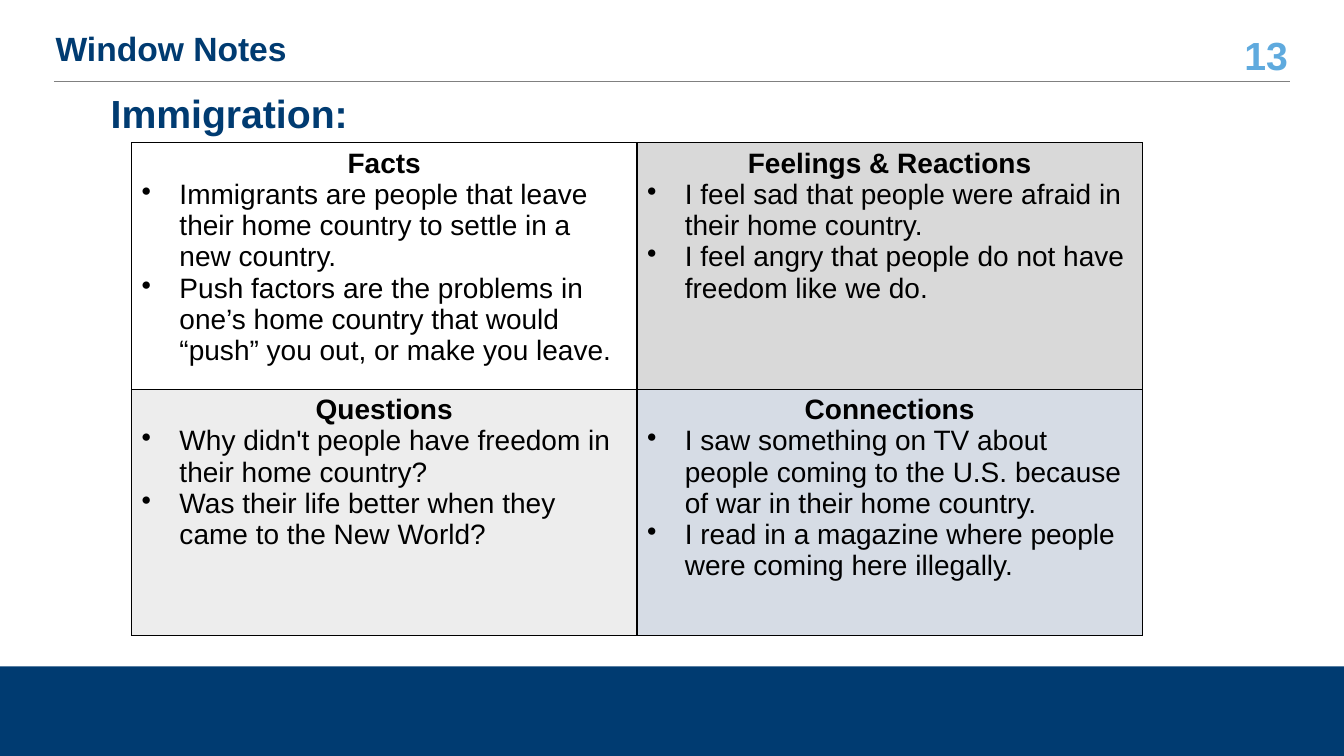
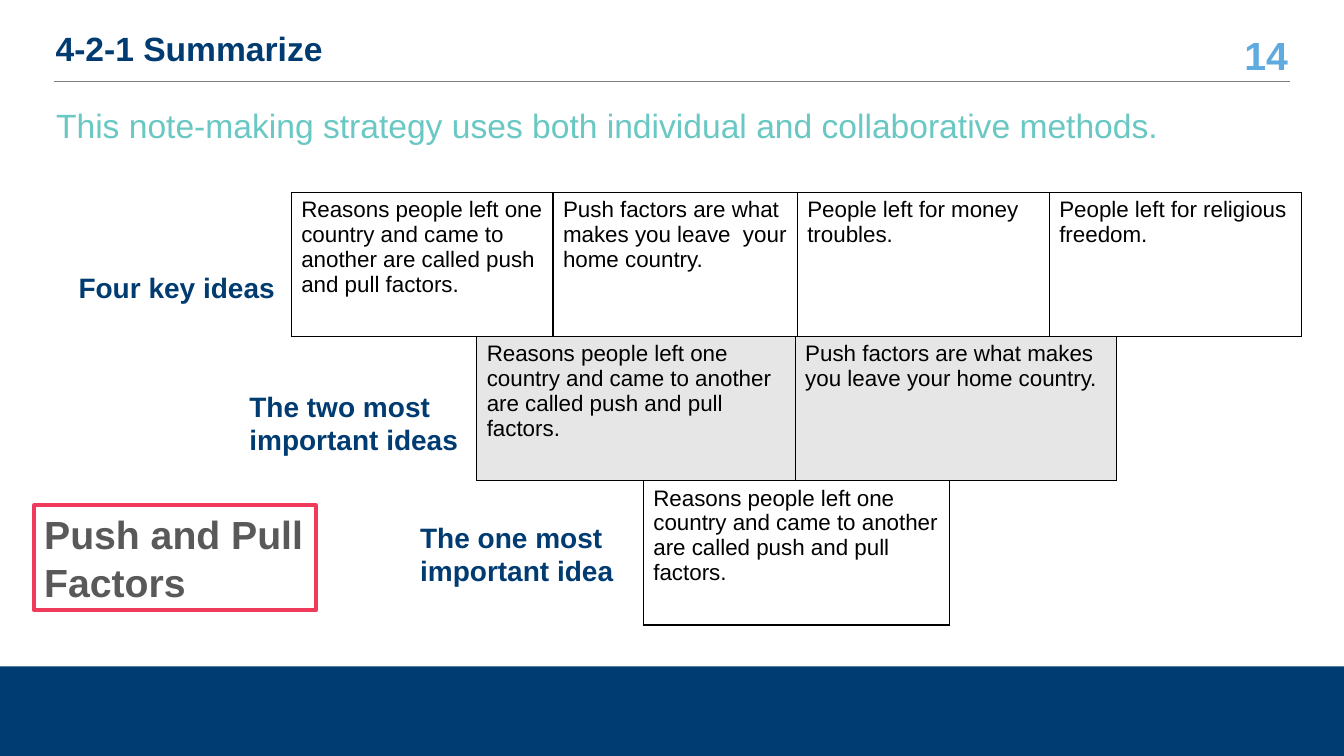
from pptx import Presentation
from pptx.dml.color import RGBColor
from pptx.enum.shapes import MSO_CONNECTOR, MSO_SHAPE
from pptx.enum.text import MSO_ANCHOR, MSO_AUTO_SIZE, PP_ALIGN
from pptx.oxml import parse_xml
from pptx.oxml.ns import nsdecls
from pptx.oxml.xmlchemy import OxmlElement
from pptx.util import Pt

NAVY, SKY, TEAL, RED = "003B71", "5FAADE", "69C8C3", "EF3A5B"
BLACK, WHITE, GRAY, DARK = "000000", "FFFFFF", "808080", "595959"
PALE, SILVER, MIST, BLUE_GRAY = "E7E6E6", "D9D9D9", "EDEDED", "D6DCE5"


def rgb(color):
    return RGBColor.from_string(color)


class Deck:
    font = "Arial"
    width, height = 960, 540

    def __init__(self):
        self.prs = Presentation()
        self.prs.slide_width, self.prs.slide_height = Pt(self.width), Pt(self.height)
        self.s = None

    def box(self, *lengths):
        return [Pt(v) for v in lengths]

    def style(self, p, size, color, bold=False, align=None):
        p.alignment = align
        for r in p.runs:
            f = r.font
            f.name, f.size, f.bold = self.font, Pt(size), bold
            f.color.rgb = rgb(color)

    def slide(self, title, number):
        self.s = self.prs.slides.add_slide(self.prs.slide_layouts[5])
        band = self.shape(0, 476, self.width, 64)
        band.fill.solid()
        band.fill.fore_color.rgb = rgb(NAVY)
        band.line.fill.background()
        self.text(str(number), 869, 24, 58, 30, 28, SKY, True, PP_ALIGN.RIGHT)
        self.rule(38.5, 921.5, 58)
        sp = self.s.shapes.title
        sp.left, sp.top, sp.width, sp.height = self.box(32.5, 21.5, 835, 30)
        tf = sp.text_frame
        tf.text = title
        tf.auto_size = MSO_AUTO_SIZE.NONE
        tf.vertical_anchor = MSO_ANCHOR.MIDDLE
        p = tf.paragraphs[0]
        p.line_spacing = 0.9
        self.style(p, 24, NAVY, True, PP_ALIGN.LEFT)

    def shape(self, x, y, w, h):
        sp = self.s.shapes.add_shape(MSO_SHAPE.RECTANGLE, *self.box(x, y, w, h))
        sp.shadow.inherit = False
        return sp

    def rule(self, x1, x2, y):
        line = self.s.shapes.add_connector(MSO_CONNECTOR.STRAIGHT, *self.box(x1, y, x2, y))
        line.line.color.rgb = rgb(GRAY)
        line.line.width = Pt(0.5)
        line._element.spPr.append(OxmlElement("a:effectLst"))

    def fill_text(self, sp, text, size, color, bold, align):
        tf = sp.text_frame
        tf.word_wrap = True
        tf.vertical_anchor = MSO_ANCHOR.MIDDLE
        tf.text = text
        self.style(tf.paragraphs[0], size, color, bold, align)

    def text(self, text, x, y, w, h, size, color, bold=True, align=PP_ALIGN.LEFT):
        sp = self.s.shapes.add_textbox(*self.box(x, y, w, h))
        self.fill_text(sp, text, size, color, bold, align)

    def framed(self, text, x, y, w, h):
        sp = self.shape(x, y, w, h)
        sp.fill.background()
        sp.line.color.rgb = rgb(RED)
        sp.line.width = Pt(3)
        self.fill_text(sp, text, 28, DARK, True, PP_ALIGN.LEFT)

    def table(self, x, y, widths, row_height, rows):
        frame = self.s.shapes.add_table(
            len(rows), len(widths), *self.box(x, y, sum(widths), row_height * len(rows)))
        tbl = frame.table
        tbl.first_row = tbl.horz_banding = False
        for col, w in zip(tbl.columns, widths):
            col.width = Pt(w)
        for i, row in enumerate(rows):
            tbl.rows[i].height = Pt(row_height)
            for j, (fill, head, items) in enumerate(row):
                self.cell(tbl.cell(i, j), fill, head, items)

    def cell(self, cell, fill, head, items):
        cell.fill.solid()
        cell.fill.fore_color.rgb = rgb(fill)
        self.borders(cell)
        tf = cell.text_frame
        tf.text = "\n".join([head] + items if head else items)
        for i, p in enumerate(tf.paragraphs):
            is_head = bool(head) and i == 0
            if head and not is_head:
                self.bullet(p)
            self.style(p, 20 if head else 16, BLACK, is_head,
                       PP_ALIGN.CENTER if is_head else PP_ALIGN.LEFT)

    def borders(self, cell):
        tcPr = cell._tc.get_or_add_tcPr()
        for i, side in enumerate("LRTB"):
            tcPr.insert(i, parse_xml(
                f'<a:ln{side} {nsdecls("a")} w="{Pt(1)}"><a:solidFill>'
                f'<a:srgbClr val="{BLACK}"/></a:solidFill></a:ln{side}>'))

    def bullet(self, p):
        pPr = p._p.get_or_add_pPr()
        pPr.set("marL", str(Pt(27)))
        pPr.set("indent", str(-Pt(27)))
        bu = OxmlElement("a:buChar")
        bu.set("char", "•")
        pPr.append(bu)


def window_notes(d):
    d.slide("Window Notes", 13)
    facts = ["Immigrants are people that leave their home country to settle in a new country.",
             "Push factors are the problems in one’s home country that would “push” you out, "
             "or make you leave."]
    feelings = ["I feel sad that people were afraid in their home country.",
                "I feel angry that people do not have freedom like we do."]
    questions = ["Why didn't people have freedom in their home country?",
                 "Was their life better when they came to the New World?"]
    connections = ["I saw something on TV about people coming to the U.S. because of war "
                   "in their home country.",
                   "I read in a magazine where people were coming here illegally."]
    d.table(94, 102, [361, 361], 176, [
        [(WHITE, "Facts", facts), (SILVER, "Feelings & Reactions", feelings)],
        [(MIST, "Questions", questions), (BLUE_GRAY, "Connections", connections)]])
    d.text("Immigration:", 72, 60, 216, 41, 28, NAVY)


def summarize(d):
    d.slide("4-2-1 Summarize", 14)
    d.text("This note-making strategy uses both individual and collaborative methods.",
           33, 70, 894, 38, 24, TEAL, False)
    steps = [
        (208, [187, 174.5, 180, 180], WHITE,
         ["Reasons people left one country and came to another are called push and pull factors.",
          "Push factors are what makes you leave  your home country.",
          "People left for money troubles.",
          "People left for religious freedom."]),
        (340.5, [227.5, 229.5], PALE,
         ["Reasons people left one country and came to another are called push and pull factors.",
          "Push factors are what makes you leave your home country."]),
        (459.5, [219], WHITE,
         ["Reasons people left one country and came to another are called push and pull factors."])]
    step_height = 103
    for i, (x, widths, fill, ideas) in enumerate(steps):
        d.table(x, 137.5 + i * step_height, widths, step_height,
                [[(fill, None, [idea]) for idea in ideas]])
    d.text("Four key ideas", 49, 189.5, 182, 32, 20, NAVY)
    d.text("The two most important ideas", 171, 273.5, 173, 57, 20, NAVY)
    d.text("The one most important idea", 293, 367.5, 173, 56, 20, NAVY)
    d.framed("Push and Pull Factors", 24.5, 361, 201, 75)


def main():
    d = Deck()
    window_notes(d)
    summarize(d)
    d.prs.save("out.pptx")


if __name__ == "__main__":
    main()
